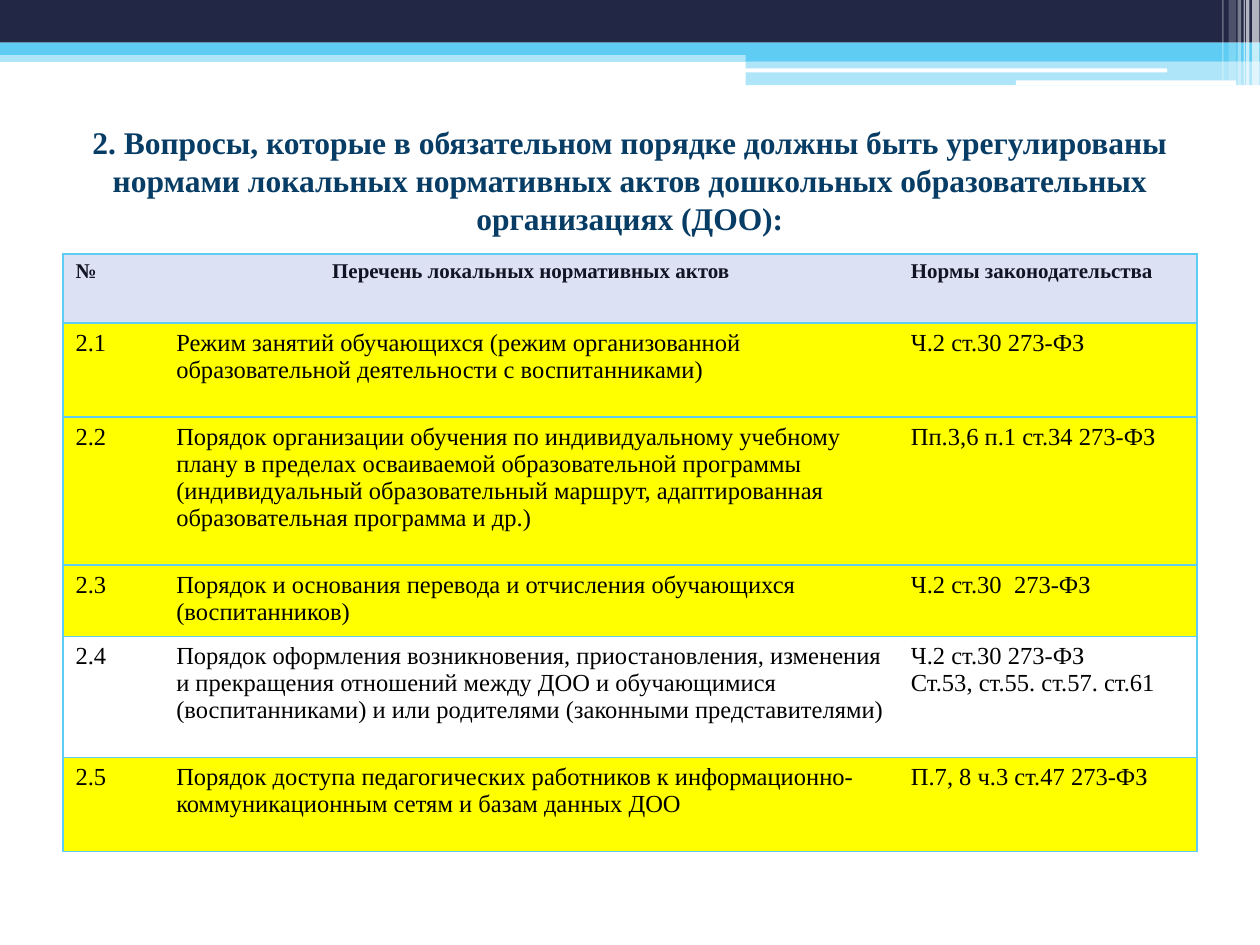
from dataclasses import dataclass

from lxml.etree import SubElement
from pptx import Presentation
from pptx.dml.color import RGBColor
from pptx.enum.shapes import MSO_SHAPE
from pptx.enum.text import MSO_ANCHOR, PP_ALIGN
from pptx.oxml.ns import qn
from pptx.util import Cm, Pt


@dataclass(frozen=True)
class Theme:
    font: str = "Times New Roman"
    navy: str = "212745"
    sky: str = "5ECCF3"
    white: str = "FFFFFF"
    title: str = "073C65"
    head_text: str = "111422"
    head_fill: str = "DCE1F4"
    body_text: str = "000000"
    mark: str = "FFFF00"
    title_size: int = 18
    head_size: int = 12
    body_size: int = 14
    border: float = 1


T = Theme()

TITLE = ("2. Вопросы, которые в обязательном порядке должны быть урегулированы "
         "нормами локальных нормативных актов дошкольных образовательных "
         "организациях (ДОО):")

HEAD = ("№", "Перечень локальных нормативных актов", "Нормы законодательства")
ROWS = [
    ("2.1", "Режим занятий обучающихся (режим организованной образовательной "
            "деятельности с воспитанниками)", "Ч.2 ст.30 273-ФЗ"),
    ("2.2", "Порядок организации обучения по индивидуальному учебному плану в "
            "пределах осваиваемой образовательной программы (индивидуальный "
            "образовательный маршрут, адаптированная образовательная программа "
            "и др.)", "Пп.3,6 п.1 ст.34 273-ФЗ"),
    ("2.3", "Порядок и основания перевода и отчисления обучающихся "
            "(воспитанников)", "Ч.2 ст.30  273-ФЗ"),
    ("2.4", "Порядок оформления возникновения, приостановления, изменения и "
            "прекращения отношений между ДОО и обучающимися (воспитанниками) и "
            "или родителями (законными представителями)",
     "Ч.2 ст.30 273-ФЗ\nСт.53, ст.55. ст.57. ст.61"),
    ("2.5", "Порядок доступа педагогических работников к "
            "информационно-коммуникационным сетям и базам данных ДОО",
     "П.7, 8 ч.3 ст.47 273-ФЗ"),
]
UNMARKED = {"2.4"}
COL_WIDTHS = (2.03, 14.81, 6.02)
ROW_HEIGHTS = (1.39, 1.9, 2.98, 1.35, 2.44, 1.9)

BANDS = [
    (0, 1.02, 25.4, 0.23, T.sky, 50),
    (0, 0, 25.4, 0.86, T.navy, 100),
    (0, 0.86, 25.4, 0.25, T.sky, 100),
    (15.03, 0.98, 10.37, 0.25, T.sky, 100),
    (15.03, 1.23, 10.37, 0.49, T.sky, 50),
]
ROUNDED_LINES = [
    (15.02, 1.38, 8.51, 0.08, T.white, 100),
    (20.48, 1.62, 4.44, 0.1, T.white, 100),
]
STRIPES = [
    (25.24, 0.15, 1.74, 65),
    (25.12, 0.07, 1.74, 65),
    (25.07, 0.03, 1.74, 60),
    (24.95, 0.07, 1.74, 40),
    (24.77, 0.15, 1.62, 20),
    (24.64, 0.03, 1.62, 30),
]


def add_bar(s, kind, x, y, w, h, color, opacity):
    sp = s.shapes.add_shape(kind, Cm(x), Cm(y), Cm(w), Cm(h))
    sp.shadow.inherit = False
    sp.line.fill.background()
    sp.fill.solid()
    sp.fill.fore_color.rgb = RGBColor.from_string(color)
    if opacity < 100:
        clr = sp.fill._xPr.find(qn("a:solidFill"))[0]
        SubElement(clr, qn("a:alpha"), val=str(opacity * 1000))


def add_text(tf, text, size, color, bold=False, align=PP_ALIGN.LEFT):
    for i, line in enumerate(text.split("\n")):
        p = tf.add_paragraph() if i else tf.paragraphs[0]
        p.alignment = align
        r = p.add_run()
        r.text = line
        r.font.name = T.font
        r.font.size = Pt(size)
        r.font.bold = bold
        r.font.color.rgb = RGBColor.from_string(color)


def set_borders(cell, sides):
    tcPr = cell._tc.get_or_add_tcPr()
    for side in "LRTB":
        ln = SubElement(tcPr, qn(f"a:ln{side}"), w=str(Pt(T.border)))
        if side in sides:
            fill = SubElement(ln, qn("a:solidFill"))
            SubElement(fill, qn("a:srgbClr"), val=T.sky)
        else:
            SubElement(ln, qn("a:noFill"))


def add_acts_table(s):
    data = [HEAD, *ROWS]
    table = s.shapes.add_table(
        len(data), len(HEAD), Cm(1.27), Cm(5.12),
        Cm(sum(COL_WIDTHS)), Cm(sum(ROW_HEIGHTS))).table
    table.horz_banding = False
    table.first_row = False
    for col, width in zip(table.columns, COL_WIDTHS):
        col.width = Cm(width)
    for row, height in zip(table.rows, ROW_HEIGHTS):
        row.height = Cm(height)
    for i, values in enumerate(data):
        for j, text in enumerate(values):
            cell = table.cell(i, j)
            set_borders(cell, ("LTB", "TB", "RTB")[j])
            if values[0] in UNMARKED:
                cell.fill.background()
            else:
                cell.fill.solid()
                cell.fill.fore_color.rgb = RGBColor.from_string(T.mark if i else T.head_fill)
            if i:
                add_text(cell.text_frame, text, T.body_size, T.body_text)
            else:
                align = PP_ALIGN.CENTER if j == 1 else PP_ALIGN.LEFT
                add_text(cell.text_frame, text, T.head_size, T.head_text, True, align)


def main():
    prs = Presentation()
    prs.slide_width, prs.slide_height = Cm(25.4), Cm(19.05)
    s = prs.slides.add_slide(prs.slide_layouts[6])
    for bar in BANDS:
        add_bar(s, MSO_SHAPE.RECTANGLE, *bar)
    for bar in ROUNDED_LINES:
        add_bar(s, MSO_SHAPE.ROUNDED_RECTANGLE, *bar)
    for x, w, h, opacity in STRIPES:
        add_bar(s, MSO_SHAPE.RECTANGLE, x, 0, w, h, T.white, opacity)

    tf = s.shapes.add_textbox(Cm(1.27), Cm(2.13), Cm(22.86), Cm(3)).text_frame
    tf.word_wrap = True
    tf.vertical_anchor = MSO_ANCHOR.MIDDLE
    add_text(tf, TITLE, T.title_size, T.title, True, PP_ALIGN.CENTER)
    add_acts_table(s)
    prs.save("out.pptx")


if __name__ == "__main__":
    main()
